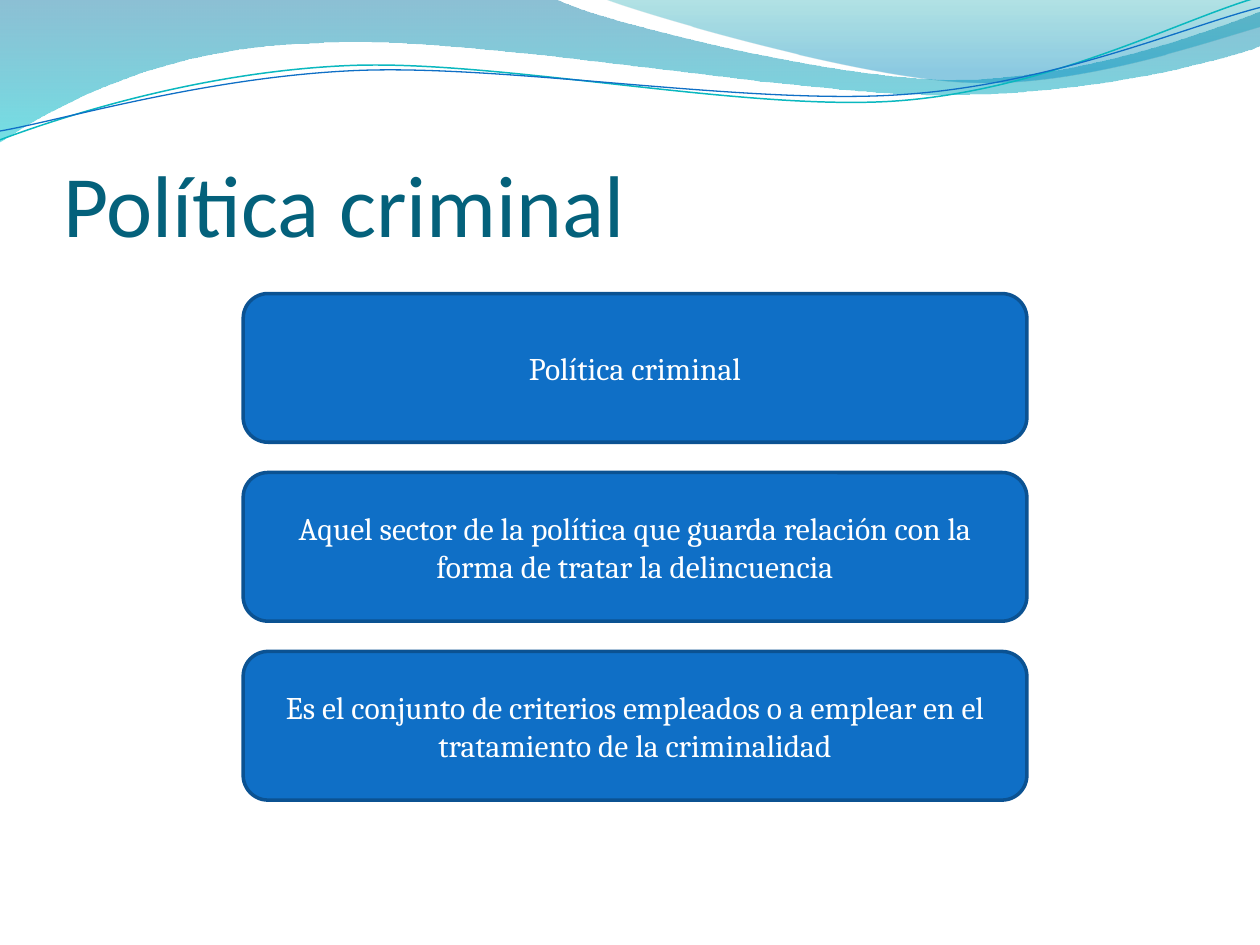
from math import cos, radians, sin

from lxml import etree
from pptx import Presentation
from pptx.dml.color import RGBColor
from pptx.enum.shapes import MSO_SHAPE
from pptx.enum.text import MSO_ANCHOR, PP_ALIGN
from pptx.oxml.ns import qn
from pptx.util import Inches, Pt

ROUND = MSO_SHAPE.ROUNDED_RECTANGLE
MIDDLE, BOTTOM = MSO_ANCHOR.MIDDLE, MSO_ANCHOR.BOTTOM
LEFT, CENTER = PP_ALIGN.LEFT, PP_ALIGN.CENTER
TILT = 2.7

BAND = [
    [(-0.01, -0.01)],
    [(4.4, -0.01)],
    [(4.76, 0.17), (6.64, 0.63), (7.58, 0.63)],
    [(8.53, 0.63), (9.58, 0.26), (10, 0.09)],
    [(10.01, 0.36)],
    [(9.83, 0.44), (8.7, 0.76), (7.46, 0.75)],
    [(6.22, 0.75), (3.82, 0.28), (2.57, 0.34)],
    [(1.29, 0.36), (0.46, 0.83), (-0.01, 1.13)],
]
CREST = [
    [(4.79, -0.01)],
    [(5.09, 0.11), (6.82, 0.62), (7.69, 0.65)],
    [(8.56, 0.69), (9.61, 0.32), (10, 0.21)],
    [(10, 0)],
]
TEAL = [
    [(0, 1.11)],
    [(0.48, 0.93), (1.58, 0.57), (2.77, 0.52)],
    [(3.95, 0.47), (5.93, 0.89), (7.13, 0.8)],
    [(8.33, 0.71), (9.38, 0.15), (9.98, -0.02)],
]
BLUE = [
    [(0, 1.04)],
    [(0.47, 0.96), (1.64, 0.61), (2.83, 0.56)],
    [(4.03, 0.51), (5.97, 0.84), (7.17, 0.75)],
    [(8.36, 0.67), (9.41, 0.21), (10, 0.06)],
]
CARDS = [
    "Política criminal",
    "Aquel sector de la política que guarda relación con la forma de tratar la delincuencia",
    "Es el conjunto de criterios empleados o a emplear en el tratamiento de la criminalidad",
]


def color(code):
    return RGBColor.from_string(code)


def turn(parts, mid, angle):
    c, s = cos(radians(angle)), sin(radians(angle))
    (mx, my) = mid
    return [
        [
            (mx + (x - mx) * c - (y - my) * s, my + (x - mx) * s + (y - my) * c)
            for x, y in part
        ]
        for part in parts
    ]


def bend(shape, parts):
    lines = iter(list(shape._element.spPr.iter(qn("a:lnTo"))))
    for part in parts[1:]:
        group = [next(lines) for point in part]
        if len(group) == 3:
            owner = group[0].getparent()
            arc = etree.SubElement(owner, qn("a:cubicBezTo"))
            group[0].addprevious(arc)
            for line in group:
                arc.append(line[0])
                owner.remove(line)


def outline(slide, parts, close):
    points = [(Inches(x), Inches(y)) for part in parts for x, y in part]
    form = slide.shapes.build_freeform(*points[0], scale=1.0)
    form.add_line_segments(points[1:], close=close)
    shape = form.convert_to_shape()
    shape.shadow.inherit = False
    bend(shape, parts)
    return shape


def wave(slide, parts, stops):
    shape = outline(slide, parts, True)
    shape.line.fill.background()
    shape.fill.gradient()
    shape.fill.gradient_angle = 270
    for stop, (place, code, alpha) in zip(shape.fill.gradient_stops, stops):
        stop.position = place
        stop.color.rgb = color(code)
    tones = shape._element.spPr.iter(qn("a:srgbClr"))
    for tone, (place, code, alpha) in zip(tones, stops):
        etree.SubElement(tone, qn("a:alpha"), val=str(alpha * 1000))


def curve(slide, parts, mid, code, width):
    shape = outline(slide, turn(parts, mid, TILT), False)
    shape.rotation = -TILT
    shape.fill.background()
    shape.line.color.rgb = color(code)
    shape.line.width = Pt(width)


def write(shape, text, size, font, code, align=LEFT, anchor=MIDDLE):
    frame = shape.text_frame
    frame.word_wrap = True
    frame.vertical_anchor = anchor
    para = frame.paragraphs[0]
    para.alignment = align
    run = para.add_run()
    run.text = text
    run.font.size = Pt(size)
    run.font.name = font
    run.font.color.rgb = color(code)


def title(slide, text):
    box = slide.shapes.add_textbox(Inches(0.5), Inches(0.77), Inches(9.08), Inches(1.25))
    frame = box.text_frame
    frame.margin_left = frame.margin_right = frame.margin_bottom = 0
    write(box, text, size=50, font="Calibri", code="04617B", anchor=BOTTOM)


def card(slide, text, top):
    shape = slide.shapes.add_shape(ROUND, Inches(1.93), Inches(top), Inches(6.22), Inches(1.18))
    shape.shadow.inherit = False
    shape.fill.solid()
    shape.fill.fore_color.rgb = color("0F6FC6")
    shape.line.color.rgb = color("0B5292")
    shape.line.width = Pt(2)
    write(shape, text, size=18, font="Cambria", code="FFFFFF", align=CENTER)


def main():
    deck = Presentation()
    deck.slide_width, deck.slide_height = Inches(10), Inches(7.5)
    slide = deck.slides.add_slide(deck.slide_layouts[6])
    wave(slide, BAND, [(0, "0074A1", 45), (1, "00C6CF", 55)])
    wave(slide, CREST, [(0, "00A1A9", 30), (0.8, "008BBF", 45)])
    curve(slide, TEAL, (4.99, 0.58), "0AB8BF", 0.85)
    curve(slide, BLUE, (5, 0.59), "0F6FC6", 0.75)
    title(slide, "Política criminal")
    for i, text in enumerate(CARDS):
        card(slide, text, 2.33 + 1.42 * i)
    deck.save("out.pptx")


if __name__ == "__main__":
    main()
